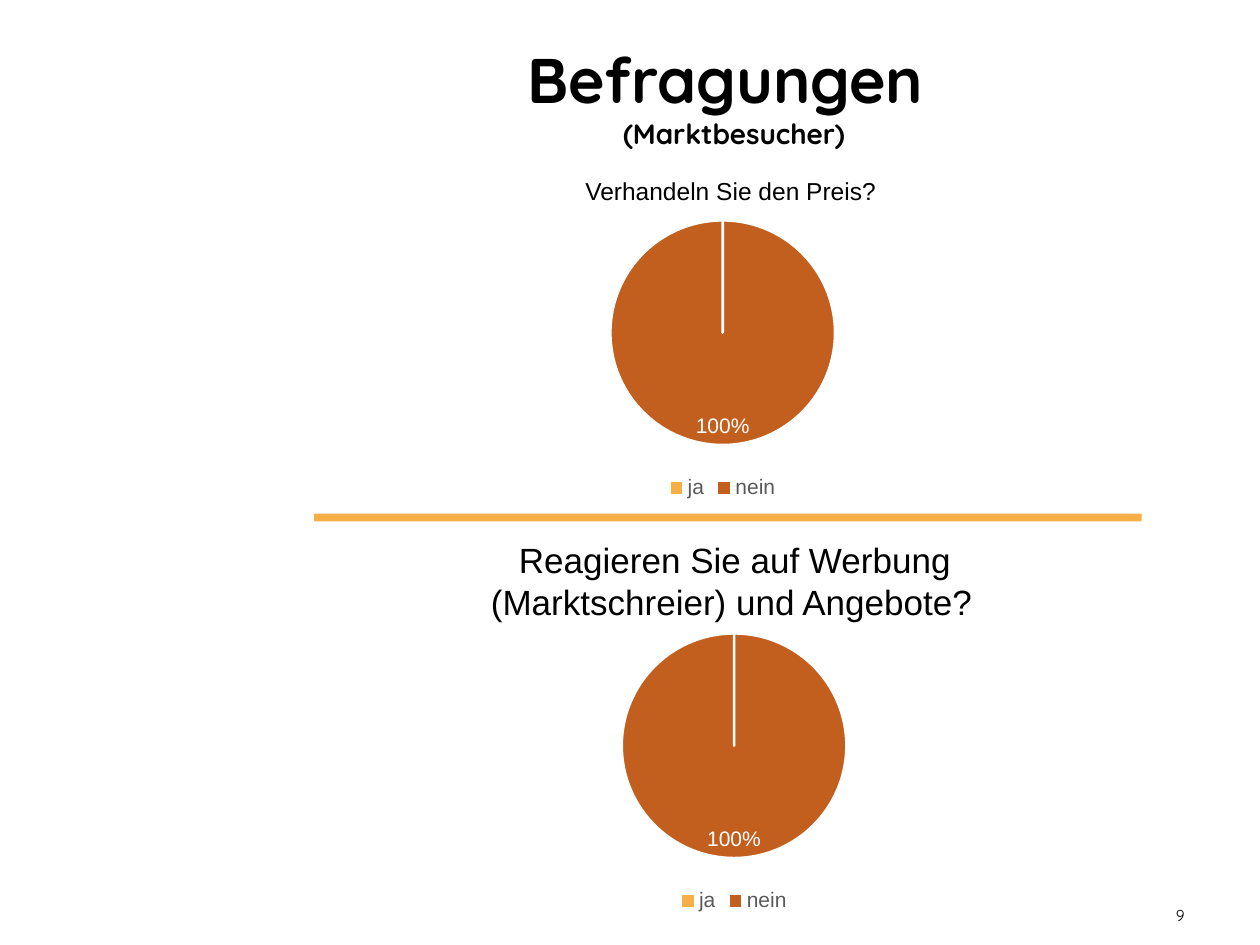
"""Build the survey slide with two pie charts."""
from lxml import etree
from pptx import Presentation
from pptx.chart.data import CategoryChartData
from pptx.dml.color import RGBColor
from pptx.enum import chart as ch, shapes, text
from pptx.oxml import parse_xml
from pptx.oxml.ns import nsdecls, qn
from pptx.util import Pt

COLORS = {"ink": "000000", "grey": "595959", "white": "FFFFFF",
          "ja": "F8AF48", "nein": "C35F1E"}


def rgb(name):
    return RGBColor.from_string(COLORS[name])


def style(font, size, color="ink", name="Arial", bold=False):
    font.name, font.size, font.bold = name, Pt(size), bold
    font.color.rgb = rgb(color)


def place(sp, box):
    sp.left, sp.top, sp.width, sp.height = map(Pt, box)


def frame(sp, align, anchor=text.MSO_ANCHOR.TOP):
    tf = sp.text_frame
    tf.word_wrap = True
    tf.auto_size = text.MSO_AUTO_SIZE.NONE
    tf.vertical_anchor = anchor
    p = tf.paragraphs[0]
    p.alignment = align
    p.space_before = Pt(0)
    return p


def add_text(p, content, **fmt):
    r = p.add_run()
    r.text = content
    style(r.font, **fmt)


def remove_bullet(p):
    pPr = p._p.get_or_add_pPr()
    pPr.set("marL", "0")
    pPr.set("indent", "0")
    etree.SubElement(pPr, qn("a:buNone"))


def add_pie(s, box):
    data = CategoryChartData()
    data.categories = ["ja", "nein"]
    data.add_series("Series 1", (0, 100))
    chart = s.shapes.add_chart(ch.XL_CHART_TYPE.PIE, *map(Pt, box), data).chart
    style(chart.font, 10)
    chart._chartSpace.find(qn("c:txPr")).addprevious(parse_xml(
        f"<c:spPr {nsdecls('c', 'a')}><a:noFill/><a:ln><a:noFill/></a:ln></c:spPr>"))
    chart.has_title = False
    chart.has_legend = True
    chart.legend.position = ch.XL_LEGEND_POSITION.BOTTOM
    chart.legend.include_in_layout = False
    style(chart.legend.font, 12, "grey")
    plot = chart.plots[0]
    plot.vary_by_categories = True
    for i, name in enumerate(("ja", "nein")):
        fmt = plot.series[0].points[i].format
        fmt.fill.solid()
        fmt.fill.fore_color.rgb = rgb(name)
        fmt.line.color.rgb = rgb("white")
        fmt.line.width = Pt(1.5)
    plot.has_data_labels = True
    labels = plot.data_labels
    labels.show_percentage = True
    labels.show_value = False
    labels.number_format = "0%;;"
    labels.number_format_is_linked = False
    labels.position = ch.XL_LABEL_POSITION.INSIDE_END
    style(labels.font, 12, "white")


def add_divider(s, box):
    sp = s.shapes.add_shape(shapes.MSO_SHAPE.RECTANGLE, *map(Pt, box))
    sp.shadow.inherit = False
    sp.fill.solid()
    sp.fill.fore_color.rgb = rgb("ja")
    sp.line.fill.background()


def main():
    prs = Presentation()
    prs.slide_width, prs.slide_height = Pt(720), Pt(540)
    s = prs.slides.add_slide(prs.slide_layouts[1])
    center, right = text.PP_ALIGN.CENTER, text.PP_ALIGN.RIGHT

    title, body = s.shapes.title, s.placeholders[1]
    place(title, (156, 12, 527, 85))
    p = frame(title, center, text.MSO_ANCHOR.MIDDLE)
    add_text(p, "Befragungen ", size=36, name="Quicksand", bold=True)
    p.add_line_break()
    add_text(p, "(Marktbesucher)", size=16, name="Quicksand", bold=True)

    place(body, (258, 97, 323, 42.5))
    p = frame(body, center)
    remove_bullet(p)
    add_text(p, "Verhandeln Sie den Preis? ", size=14)
    add_pie(s, (173, 116, 480, 172))

    question = s.shapes.add_textbox(*map(Pt, (258.5, 304, 323, 52)))
    p = frame(question, center)
    add_text(p, "Reagieren Sie auf Werbung (Marktschreier) und Angebote?", size=20)
    add_text(p, " ", size=14)
    add_pie(s, (179.5, 352, 480, 172))
    add_divider(s, (179.5, 293.5, 473, 4.5))

    number = s.shapes.add_textbox(*map(Pt, (516, 514, 168, 16)))
    add_text(frame(number, right), "9", size=9, name="Quicksand")
    prs.save("out.pptx")


if __name__ == "__main__":
    main()
